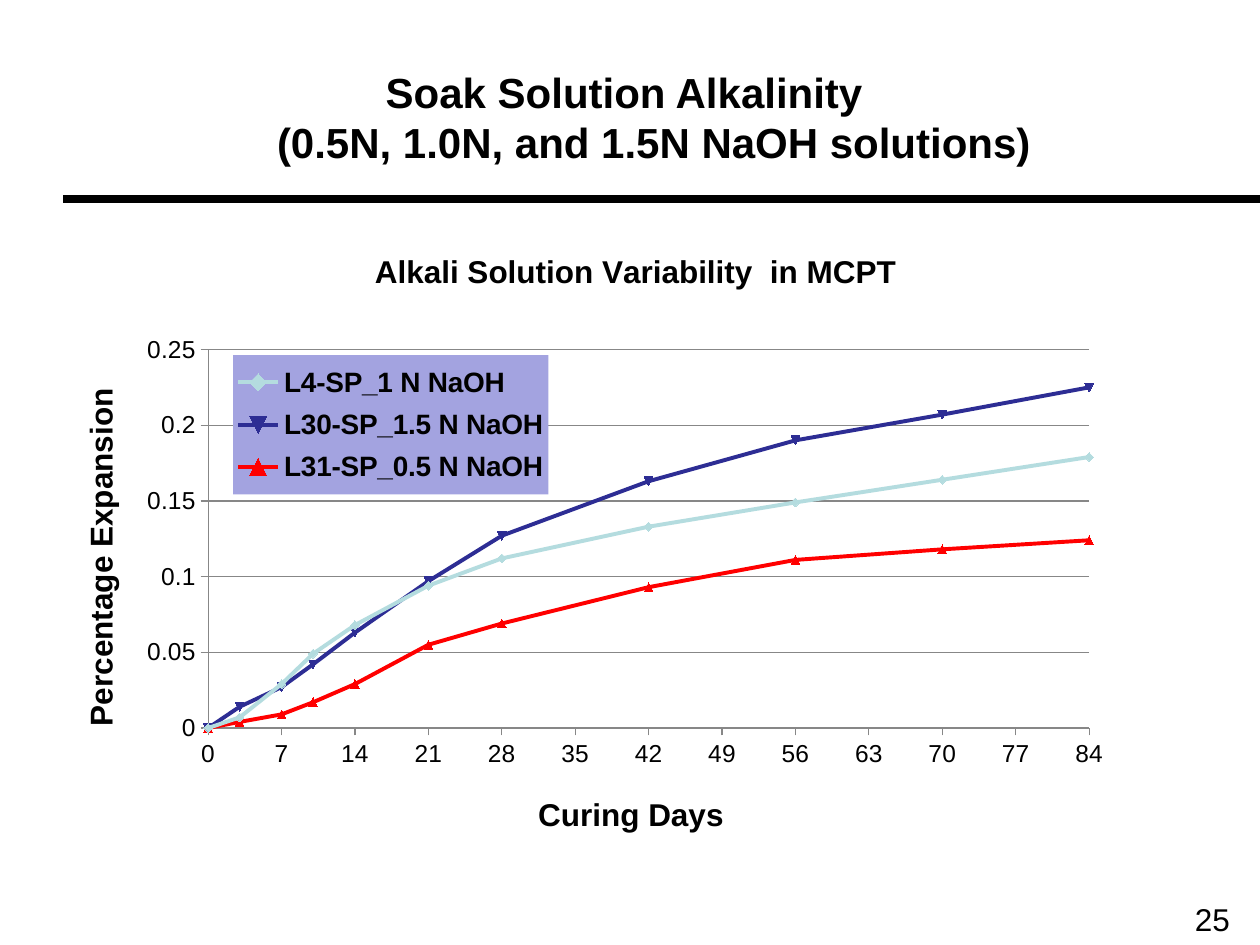
from lxml import etree
from pptx import Presentation
from pptx.chart.data import XyChartData
from pptx.dml.color import RGBColor
from pptx.enum.chart import XL_CHART_TYPE, XL_LEGEND_POSITION, XL_MARKER_STYLE, XL_TICK_MARK
from pptx.enum.shapes import MSO_CONNECTOR
from pptx.enum.text import MSO_ANCHOR, MSO_AUTO_SIZE, PP_ALIGN
from pptx.oxml import parse_xml
from pptx.oxml.ns import nsdecls, qn
from pptx.util import Inches, Pt

SCATTER = XL_CHART_TYPE.XY_SCATTER_SMOOTH
LEGEND_RIGHT = XL_LEGEND_POSITION.RIGHT
AUTO_MARKER = XL_MARKER_STYLE.AUTOMATIC
TICK_OUT, TICK_NONE = XL_TICK_MARK.OUTSIDE, XL_TICK_MARK.NONE
STRAIGHT = MSO_CONNECTOR.STRAIGHT
MIDDLE = MSO_ANCHOR.MIDDLE
NO_AUTOFIT = MSO_AUTO_SIZE.NONE
CENTER, RIGHT = PP_ALIGN.CENTER, PP_ALIGN.RIGHT

FONT = "Arial"
COLORS = {"text": "000000", "grid": "878787", "legend": "A3A3E0",
          "1 N": "B4DCDF", "1.5 N": "2D2D94", "0.5 N": "FF0000"}

DAYS = [0, 3, 7, 10, 14, 21, 28, 42, 56, 70, 84]
EXPANSION = [
    ("L4-SP_1 N NaOH", "1 N",
     [0, 0.007, 0.029, 0.049, 0.068, 0.094, 0.112, 0.133, 0.149, 0.164, 0.179]),
    ("L30-SP_1.5 N NaOH", "1.5 N",
     [0, 0.014, 0.027, 0.042, 0.063, 0.097, 0.127, 0.163, 0.19, 0.207, 0.225]),
    ("L31-SP_0.5 N NaOH", "0.5 N",
     [0, 0.004, 0.009, 0.017, 0.029, 0.055, 0.069, 0.093, 0.111, 0.118, 0.124]),
]


def rgb(name):
    return RGBColor.from_string(COLORS[name])


def place(parent, after, x, y, w=None, h=None, inner=False):
    """Give a chart part a manual layout, in fractions of the chart's size."""
    for old in parent.findall(qn("c:layout")):
        parent.remove(old)
    layout = parse_xml(f"<c:layout {nsdecls('c')}><c:manualLayout/></c:layout>")
    values = [("layoutTarget", "inner")] if inner else []
    values += [("xMode", "edge"), ("yMode", "edge"), ("x", x), ("y", y)]
    if w is not None:
        values += [("w", w), ("h", h)]
    for tag, value in values:
        etree.SubElement(layout[0], qn(f"c:{tag}")).set("val", str(value))
    if after is None:
        parent.insert(0, layout)
    else:
        parent.find(qn(after)).addnext(layout)


class SlideBuilder:
    def __init__(self, prs):
        self.s = prs.slides.add_slide(prs.slide_layouts[5])

    def style(self, font, size, bold=False):
        font.name, font.size, font.bold = FONT, Pt(size), bold
        font.color.rgb = rgb("text")

    def run(self, p, text, size, bold=False):
        r = p.add_run()
        r.text = text
        self.style(r.font, size, bold)

    def title(self, lines, left, top, width, height):
        sp = self.s.shapes.title
        sp.left, sp.top = Inches(left), Inches(top)
        sp.width, sp.height = Inches(width), Inches(height)
        tf = sp.text_frame
        tf.auto_size, tf.vertical_anchor, tf.word_wrap = NO_AUTOFIT, MIDDLE, True
        p = tf.paragraphs[0]
        p.alignment = CENTER
        pPr = p._p.get_or_add_pPr()
        pPr.set("marL", str(Inches(0.38)))
        pPr.set("indent", str(Inches(-0.38)))
        for i, line in enumerate(lines):
            if i:
                p.add_line_break()
            self.run(p, line, 24, True)

    def rule(self, x1, x2, y, weight):
        line = self.s.shapes.add_connector(STRAIGHT, Inches(x1), Inches(y), Inches(x2), Inches(y))
        line.line.color.rgb, line.line.width = rgb("text"), Pt(weight)
        etree.SubElement(line._element.spPr, qn("a:effectLst"))

    def text(self, text, left, top, width, height, size):
        tf = self.s.shapes.add_textbox(Inches(left), Inches(top), Inches(width), Inches(height)).text_frame
        tf.word_wrap = True
        p = tf.paragraphs[0]
        p.alignment = RIGHT
        self.run(p, text, size)

    def chart_title(self, title, text, x, y):
        self.run(title.text_frame.paragraphs[0], text, 18, True)
        place(title._element, "c:tx", x, y)

    def axis(self, axis, text, x, y, maximum, step, grid):
        axis.minimum_scale, axis.maximum_scale, axis.major_unit = 0, maximum, step
        axis.major_tick_mark, axis.minor_tick_mark = TICK_OUT, TICK_NONE
        axis.has_major_gridlines = grid
        axis.format.line.color.rgb = rgb("grid")
        if grid:
            axis.major_gridlines.format.line.color.rgb = rgb("grid")
        axis.tick_labels.number_format = "General"
        axis.tick_labels.number_format_is_linked = False
        self.style(axis.tick_labels.font, 14)
        self.chart_title(axis.axis_title, text, x, y)

    def legend(self, chart, x, y, w, h):
        chart.has_legend = True
        legend = chart.legend
        legend.position, legend.include_in_layout = LEGEND_RIGHT, False
        self.style(legend.font, 16, True)
        place(legend._element, "c:legendPos", x, y, w, h)
        legend._element.find(qn("c:overlay")).addnext(parse_xml(
            f'<c:spPr {nsdecls("c", "a")}><a:solidFill><a:srgbClr val="{COLORS["legend"]}"/>'
            "</a:solidFill><a:ln><a:noFill/></a:ln></c:spPr>"))

    def scatter(self, left, top, width, height):
        data = XyChartData()
        for name, _, values in EXPANSION:
            series = data.add_series(name)
            for day, value in zip(DAYS, values):
                series.add_data_point(day, value)
        chart = self.s.shapes.add_chart(SCATTER, Inches(left), Inches(top), Inches(width),
                                        Inches(height), data).chart
        self.style(chart.font, 10)
        chart.has_title = True
        self.chart_title(chart.chart_title, "Alkali Solution Variability  in MCPT", 0.27, 0.04)
        self.axis(chart.category_axis, "Curing Days", 0.414, 0.91, 84, 7, False)
        self.axis(chart.value_axis, "Percentage Expansion", 0.01, 0.26, 0.25, 0.05, True)
        self.legend(chart, 0.15, 0.216, 0.278, 0.223)
        plot = chart.plots[0]
        plot.vary_by_categories = False
        place(plot._element.getparent(), None, 0.128, 0.207, 0.777, 0.607, inner=True)
        for i, (series, (_, color, _)) in enumerate(zip(plot.series, EXPANSION), 1):
            # The index picks the automatic marker: diamond, then the two triangles.
            series._element.find(qn("c:idx")).set("val", str(i))
            series.smooth = True
            series.format.line.color.rgb, series.format.line.width = rgb(color), Pt(2.25)
            marker = series.marker
            marker.style, marker.size = AUTO_MARKER, 5
            marker.format.fill.solid()
            marker.format.fill.fore_color.rgb = rgb(color)
            marker.format.line.color.rgb = rgb(color)


def main():
    prs = Presentation()
    prs.slide_width, prs.slide_height = Inches(10), Inches(7.5)
    slide = SlideBuilder(prs)
    slide.rule(0.5, 10, 1.58, 4.5)
    slide.text("25", 9.25, 7.09, 0.61, 0.4, 18)
    slide.title(["Soak Solution Alkalinity ", "(0.5N, 1.0N, and 1.5N NaOH solutions)"], 0.5, 0.3, 9, 1.25)
    slide.scatter(0.5, 1.75, 9, 4.95)
    prs.save("out.pptx")


if __name__ == "__main__":
    main()
